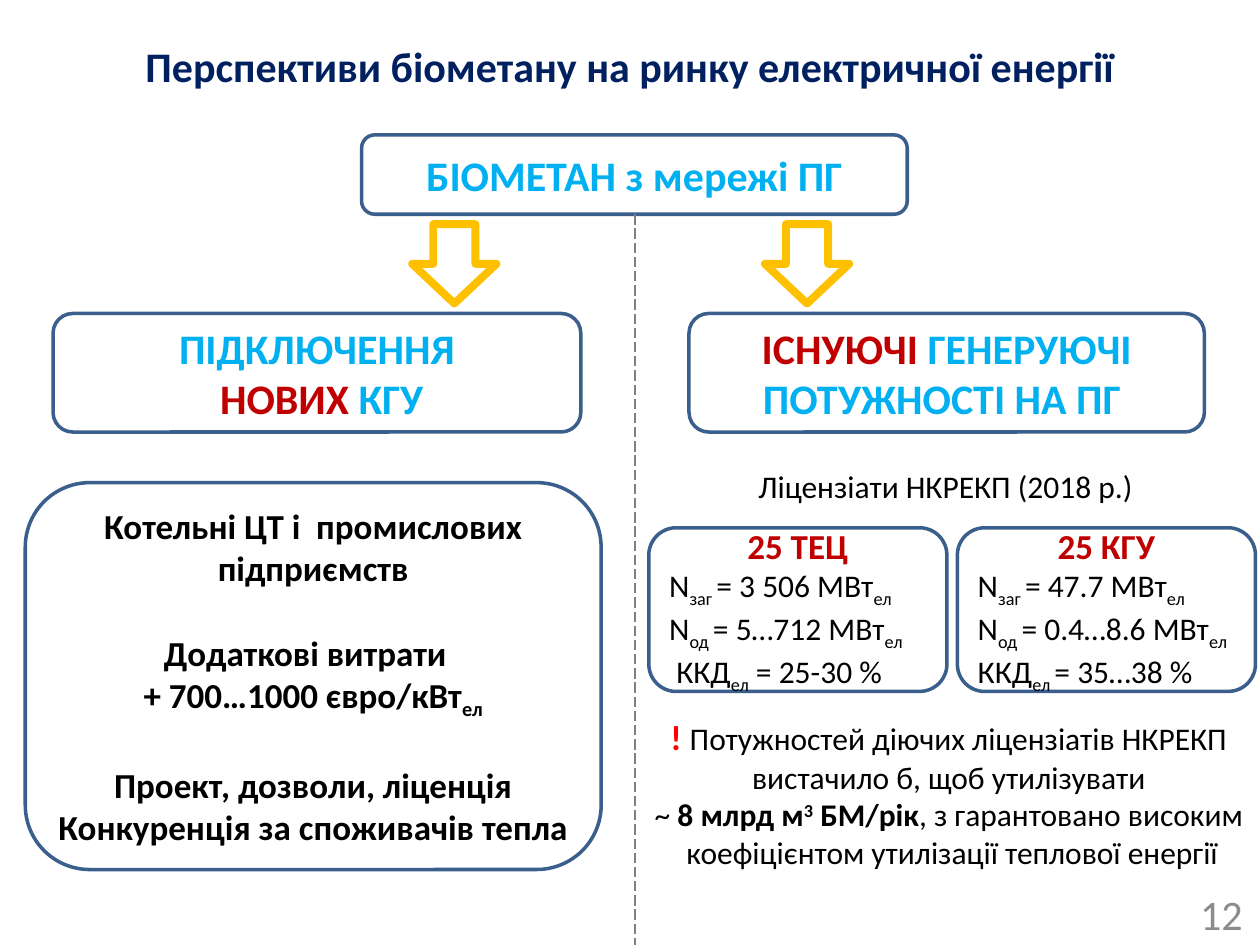
"""Builds the slide on the prospects of biomethane in the electricity market."""
from lxml import etree
from pptx import Presentation, util as u
from pptx.dml import color
from pptx.enum import dml, shapes, text
from pptx.oxml import ns

NAVY, CYAN, RED, BLACK = "002060", "00B0F0", "C00000", "000000"
BORDER, WHITE, GOLD, GREY = "3A5F8C", "FFFFFF", "FFC000", "808080"
CENTER, LEFT, RIGHT = text.PP_ALIGN.CENTER, text.PP_ALIGN.LEFT, text.PP_ALIGN.RIGHT
GAP = 24.4

STYLES = {
    "title": (24, NAVY, True, 0),
    "head": (24, CYAN, True, 0),
    "accent": (24, RED, True, 0),
    "strong": (20, BLACK, True, 0),
    "strong sub": (20, BLACK, True, -25000),
    "group": (20, RED, True, 0),
    "alert": (20, "FF0000", True, 0),
    "plain": (18, BLACK, False, 0),
    "sub": (18, BLACK, False, -25000),
    "bold": (18, BLACK, True, 0),
    "bold sup": (18, BLACK, True, 30000),
    "number": (24, "8C8C8C", False, 0),
}

HEADINGS = [
    ((7.29, 2.72, 11, 1.6), [[("БІОМЕТАН з мережі ПГ", "head")]]),
    ((1.07, 6.32, 10.64, 2.39), [
        [("ПІДКЛЮЧЕННЯ", "head")],
        [(" ", "head"), ("НОВИХ", "accent"), (" КГУ", "head")]]),
    ((13.89, 6.32, 10.39, 2.39), [
        [("ІСНУЮЧІ", "accent"), (" ГЕНЕРУЮЧІ ПОТУЖНОСТІ НА ПГ ", "head")]]),
]
ARROWS_LEFT = (8.31, 15.42)
GROUPS = [
    (13.08, "25 ТЕЦ", [
        [("N", "plain"), ("заг ", "sub"), ("= 3 506 МВт", "plain"), ("ел", "sub")],
        [("N", "plain"), ("од ", "sub"), ("= 5…712 МВт", "plain"), ("ел", "sub")],
        [(" ККД", "plain"), ("ел", "sub"), (" = 25-30 %", "plain")]]),
    (19.3, "25 КГУ", [
        [("N", "plain"), ("заг ", "sub"), ("= 47.7 МВт", "plain"), ("ел", "sub")],
        [("N", "plain"), ("од ", "sub"), ("= 0.4…8.6 МВт", "plain"), ("ел", "sub")],
        [("ККД", "plain"), ("ел ", "sub"), ("= 35…38 %", "plain")]]),
]
COSTS = [
    [("Котельні ЦТ і  промислових підприємств", "strong")],
    [("Додаткові витрати  ", "strong")],
    [("+ 700…1000 євро/кВт", "strong"), ("ел", "strong sub")],
    [("Проект, дозволи, ліценція", "strong")],
    [("Конкуренція за споживачів тепла ", "strong")],
]
CONCLUSION = [
    [("! ", "alert"), ("Потужностей діючих ліцензіатів НКРЕКП ", "plain")],
    [("вистачило б, щоб утилізувати ", "plain")],
    [("~ ", "plain"), ("8 млрд м", "bold"), ("3", "bold sup"), (" БМ/рік", "bold"),
     (", з гарантовано високим ", "plain")],
    [("коефіцієнтом утилізації теплової енергії", "plain")],
]


def rgb(value):
    return color.RGBColor.from_string(value)


def write(shape, paragraphs, aligns=(CENTER,), gaps=(), middle=True, wrap=True):
    frame = shape.text_frame
    frame.word_wrap = wrap
    frame.vertical_anchor = text.MSO_ANCHOR.MIDDLE if middle else text.MSO_ANCHOR.TOP
    for index, spans in enumerate(paragraphs):
        para = frame.paragraphs[0] if index == 0 else frame.add_paragraph()
        para.alignment = aligns[min(index, len(aligns) - 1)]
        if index in gaps:
            para.space_before = u.Pt(GAP)
        for words, style in spans:
            size, shade, bold, baseline = STYLES[style]
            span = para.add_run()
            span.text = words
            span.font.name, span.font.size, span.font.bold = "Calibri", u.Pt(size), bold
            span.font.color.rgb = rgb(shade)
            if baseline:
                span._r.get_or_add_rPr().set("baseline", str(baseline))


def add_shape(page, kind, place, line, width, filled=True):
    shape = page.shapes.add_shape(kind, *map(u.Cm, place))
    shape.shadow.inherit = False
    if filled:
        shape.fill.solid()
        shape.fill.fore_color.rgb = rgb(WHITE)
    else:
        shape.fill.background()
    shape.line.color.rgb = rgb(line)
    shape.line.width = u.Pt(width)
    return shape


def add_box(page, place, paragraphs, filled=True, **options):
    box = add_shape(page, shapes.MSO_SHAPE.ROUNDED_RECTANGLE, place, BORDER, 2, filled)
    write(box, paragraphs, **options)


def add_label(page, place, paragraphs, **options):
    write(page.shapes.add_textbox(*map(u.Cm, place)), paragraphs, **options)


def add_divider(page, x, top, bottom):
    line = page.shapes.add_connector(
        shapes.MSO_CONNECTOR.STRAIGHT, u.Cm(x), u.Cm(top), u.Cm(x), u.Cm(bottom))
    line.line.color.rgb = rgb(GREY)
    line.line.width = u.Pt(0.75)
    line.line.dash_style = dml.MSO_LINE.LONG_DASH
    etree.SubElement(line._element.spPr, ns.qn("a:effectLst"))


def main():
    deck = Presentation()
    deck.slide_width, deck.slide_height = u.Cm(25.4), u.Cm(19.05)
    page = deck.slides.add_slide(deck.slide_layouts[6])

    add_label(page, (0, 0.74, 25.4, 1.19),
              [[("Перспективи біометану на ринку електричної енергії", "title")]])
    for place, paragraphs in HEADINGS:
        add_box(page, place, paragraphs)
    for left in ARROWS_LEFT:
        add_shape(page, shapes.MSO_SHAPE.DOWN_ARROW, (left, 4.52, 1.7, 1.6), GOLD, 4.5)
    add_divider(page, 12.8, 4.32, 19.05)

    add_label(page, (15.04, 9.3, 8.15, 1.02),
              [[("Ліцензіати НКРЕКП (2018 р.)", "plain")]],
              aligns=(LEFT,), middle=False, wrap=False)
    for left, name, figures in GROUPS:
        add_box(page, (left, 10.64, 6.01, 3.3), [[(name, "group")]] + figures,
                filled=False, aligns=(CENTER, LEFT))
    add_box(page, (0.51, 9.73, 11.61, 7.8), COSTS, filled=False, gaps=(1, 3))
    add_label(page, (12.85, 14.3, 12.7, 3.43), CONCLUSION, middle=False, wrap=False)
    add_label(page, (19.38, 17.91, 5.92, 1.02), [[("12", "number")]], aligns=(RIGHT,))
    deck.save("out.pptx")


if __name__ == "__main__":
    main()
